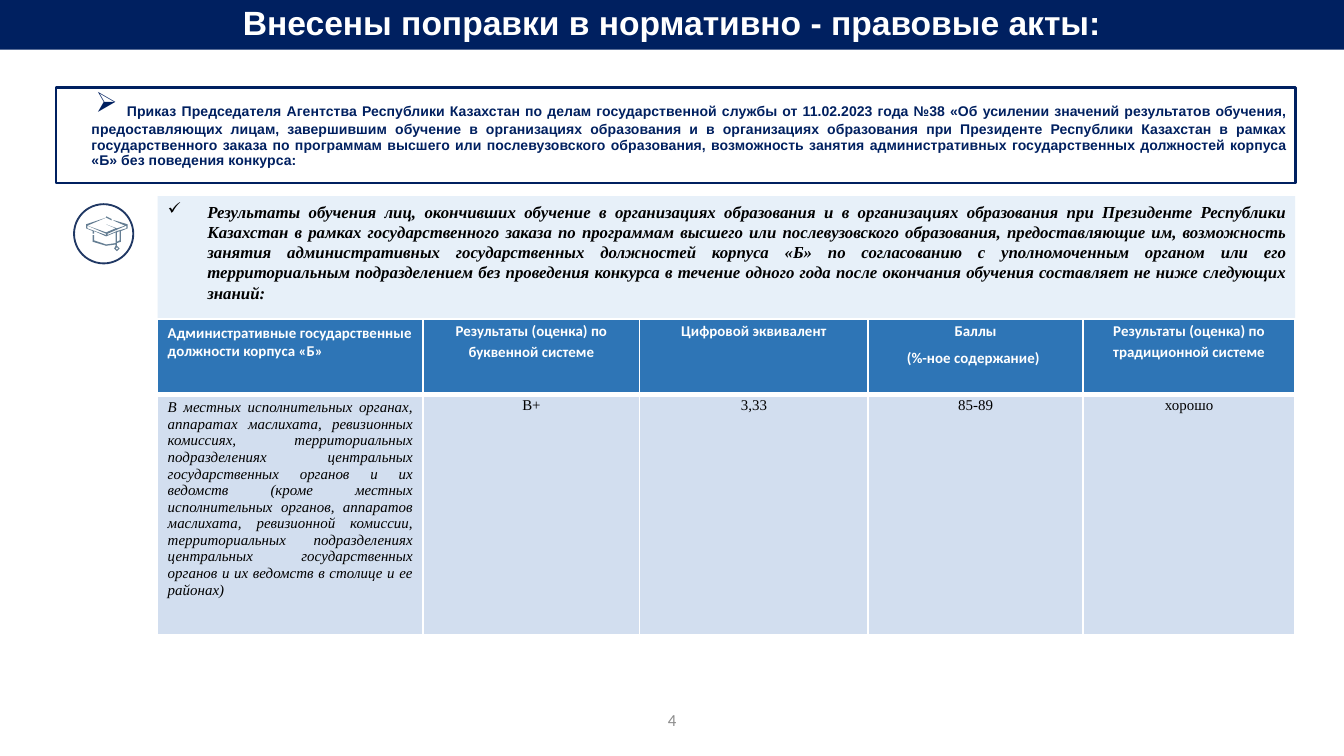
"""Build the slide on amendments to legal acts with its table of required grades."""
from dataclasses import dataclass

from lxml import etree
from pptx import Presentation
from pptx.dml.color import RGBColor
from pptx.enum import shapes, text
from pptx.oxml import ns
from pptx.util import Cm, Pt


@dataclass(frozen=True)
class Theme:
    navy: str = "002060"
    ring: str = "203864"
    cap: str = "657E93"
    white: str = "FFFFFF"
    black: str = "000000"
    gray: str = "8C8C8C"
    panel: str = "E7F0F9"
    header: str = "2E75B6"
    body: str = "D2DEEF"
    sans: str = "Arial"
    serif: str = "Times New Roman"
    plain: str = "Calibri"
    symbols: str = "Wingdings"
    arrow: str = "Ø"
    check: str = "ü"
    title_size: float = 18
    marker_size: float = 15
    order_size: float = 7.5
    text_size: float = 9
    table_size: float = 8
    gap_size: float = 11


theme = Theme()
align = text.PP_ALIGN


def style(para, name, size, color, bold=False, italic=False, alignment=align.CENTER, spacing=1.0):
    font = para.font
    font.name, font.size, font.bold, font.italic = name, Pt(size), bold, italic
    font.color.rgb = RGBColor.from_string(color)
    para.alignment, para.line_spacing = alignment, spacing


def add_bullet(para, char, margin, indent):
    props = para._p.get_or_add_pPr()
    props.set("marL", str(Cm(margin)))
    props.set("indent", str(Cm(indent)))
    etree.SubElement(props, ns.qn("a:buFont"), typeface=theme.symbols, pitchFamily="2", charset="2")
    etree.SubElement(props, ns.qn("a:buChar"), char=char)


deck = Presentation()
deck.slide_width, deck.slide_height = Cm(25.4), Cm(14.29)
page = deck.slides.add_slide(deck.slide_layouts[5])

title = page.shapes.title
title.left, title.top, title.width, title.height = Cm(0), Cm(0), Cm(25.4), Cm(0.94)
title.fill.solid()
title.fill.fore_color.rgb = RGBColor.from_string(theme.navy)
title.text_frame.text = "Внесены поправки в нормативно - правовые акты:"
title.text_frame.vertical_anchor = text.MSO_ANCHOR.MIDDLE
style(title.text_frame.paragraphs[0], theme.sans, theme.title_size, theme.white, bold=True, spacing=0.9)

blocks = {}
for name, kind, place, fill, line, weight in [
    ("order", shapes.MSO_SHAPE.RECTANGLE, (1.06, 1.65, 23.43, 1.81), theme.white, theme.navy, 1.5),
    ("results", shapes.MSO_SHAPE.RECTANGLE, (2.98, 3.71, 21.5, 8.3), theme.panel, None, 0),
    ("ring", shapes.MSO_SHAPE.OVAL, (1.4, 3.86, 1.12, 1.12), theme.white, theme.ring, 1),
]:
    box = page.shapes.add_shape(kind, *map(Cm, place))
    box.shadow.inherit = False
    box.fill.solid()
    box.fill.fore_color.rgb = RGBColor.from_string(fill)
    if line:
        box.line.color.rgb = RGBColor.from_string(line)
        box.line.width = Pt(weight)
    else:
        box.line.fill.background()
    frame = box.text_frame
    frame.word_wrap = True
    frame.vertical_anchor = text.MSO_ANCHOR.TOP
    frame.margin_left = frame.margin_right = Cm(0.19)
    frame.margin_top = frame.margin_bottom = Cm(0.1)
    blocks[name] = frame

para = blocks["order"].paragraphs[0]
add_bullet(para, theme.arrow, 0.48, 0.08)
style(para, theme.sans, theme.order_size, theme.navy, bold=True, alignment=align.JUSTIFY, spacing=0.9)
para.space_before = Pt(7.5)
for words, size in [
    (" ", theme.marker_size),
    ("Приказ Председателя Агентства Республики Казахстан по делам государственной службы от 11.02.2023 года №38 "
     "«Об усилении значений результатов обучения, предоставляющих лицам, завершившим обучение в организациях "
     "образования и в организациях образования при Президенте Республики Казахстан в рамках государственного "
     "заказа по программам высшего или послевузовского образования, возможность занятия административных "
     "государственных должностей корпуса «Б» без поведения конкурса:", theme.order_size),
]:
    span = para.add_run()
    span.text = words
    span.font.size = Pt(size)

para = blocks["results"].paragraphs[0]
add_bullet(para, theme.check, 0.75, -0.75)
para.add_run().text = (
    "Результаты обучения лиц, окончивших обучение в организациях образования и в организациях образования при "
    "Президенте Республики Казахстан в рамках государственного заказа по программам высшего или послевузовского "
    "образования, предоставляющие им, возможность занятия административных государственных должностей корпуса «Б» "
    "по согласованию с уполномоченным органом или его территориальным подразделением без проведения конкурса в "
    "течение одного года после окончания обучения составляет не ниже следующих знаний:")
style(para, theme.serif, theme.text_size, theme.black, bold=True, italic=True, alignment=align.JUSTIFY)

cap_contours = [
    [(94, 168), (94, 170), (87, 172), (87, 171)],
    [(65, 168), (79, 174), (79, 175), (65, 170)],
    [(87, 171), (87, 172), (80, 175), (80, 174)],
    [(89, 172), (89, 179), (87, 180), (87, 173)],
    [(87, 184), (88, 185), (87, 186), (86, 185)],
    [(79, 161), (79, 162), (64, 167), (64, 170), (69, 172), (69, 174), (70, 174), (70, 172), (79, 176),
     (86, 173), (86, 181), (79, 182), (70, 179), (70, 175), (69, 175), (69, 180), (79, 183), (86, 182),
     (86, 183), (85, 185), (87, 187), (89, 185), (87, 183), (87, 181), (90, 180), (90, 172), (95, 170),
     (95, 167), (85, 164), (84, 164), (93, 168), (87, 170), (79, 167), (86, 170), (79, 173), (65, 168),
     (79, 162), (83, 164), (83, 163)],
]
builder = page.shapes.build_freeform(*cap_contours[0][0], scale=Cm(0.0254))
for number, contour in enumerate(cap_contours):
    if number:
        builder.move_to(*contour[0])
    builder.add_line_segments(contour[1:], close=True)
cap = builder.convert_to_shape()
cap.shadow.inherit = False
cap.fill.solid()
cap.fill.fore_color.rgb = RGBColor.from_string(theme.cap)
cap.line.fill.background()

rows = [
    ["Административные государственные должности корпуса «Б»", "Результаты (оценка) по буквенной системе",
     "Цифровой эквивалент", "Баллы\n(%-ное содержание)", "Результаты (оценка) по традиционной системе"],
    ["В местных исполнительных органах, аппаратах маслихата, ревизионных комиссиях, территориальных "
     "подразделениях центральных государственных органов и их ведомств (кроме местных исполнительных органов, "
     "аппаратов маслихата, ревизионной комиссии, территориальных подразделениях центральных государственных "
     "органов и их ведомств в столице и ее районах)", "В+", "3,33", "85-89", "хорошо"],
]
grid = page.shapes.add_table(2, 5, Cm(2.98), Cm(6.03), Cm(21.5), Cm(5.97)).table
for column, width in zip(grid.columns, (5.02, 4.09, 4.32, 4.06, 4.01)):
    column.width = Cm(width)
for row, height in zip(grid.rows, (1.42, 4.55)):
    row.height = Cm(height)
for r, values in enumerate(rows):
    for c, words in enumerate(values):
        cell = grid.cell(r, c)
        side, edge = (0.19, 0.1) if c == 0 else (0.16, 0)
        cell.margin_left = cell.margin_right = Cm(side)
        cell.margin_top = cell.margin_bottom = Cm(edge)
        props = cell._tc.get_or_add_tcPr()
        for tag, weight in (("lnL", 1), ("lnR", 1), ("lnT", 3 if r else 1), ("lnB", 1 if r else 3)):
            border = etree.SubElement(props, ns.qn(f"a:{tag}"), w=str(Pt(weight)))
            paint = etree.SubElement(border, ns.qn("a:solidFill"))
            etree.SubElement(paint, ns.qn("a:srgbClr"), val=theme.white)
        cell.fill.solid()
        cell.fill.fore_color.rgb = RGBColor.from_string(theme.body if r else theme.header)
        cell.text_frame.text = words
        first_column = align.JUSTIFY if r else align.LEFT
        for para in cell.text_frame.paragraphs:
            style(para, theme.serif if r else theme.plain, theme.table_size, theme.black if r else theme.white,
                  bold=r == 0, italic=r == 1 and c == 0, alignment=align.CENTER if c else first_column,
                  spacing=1.15 if c else 1.0)
span = grid.cell(0, 3).text_frame.paragraphs[1].add_run()
span.text = " "
span.font.size = Pt(theme.gap_size)

page_number = page.shapes.add_textbox(Cm(8.41), Cm(13.23), Cm(8.59), Cm(0.76)).text_frame
page_number.word_wrap = True
page_number.vertical_anchor = text.MSO_ANCHOR.MIDDLE
page_number.text = "4"
style(page_number.paragraphs[0], theme.plain, theme.text_size, theme.gray)

deck.save("out.pptx")
